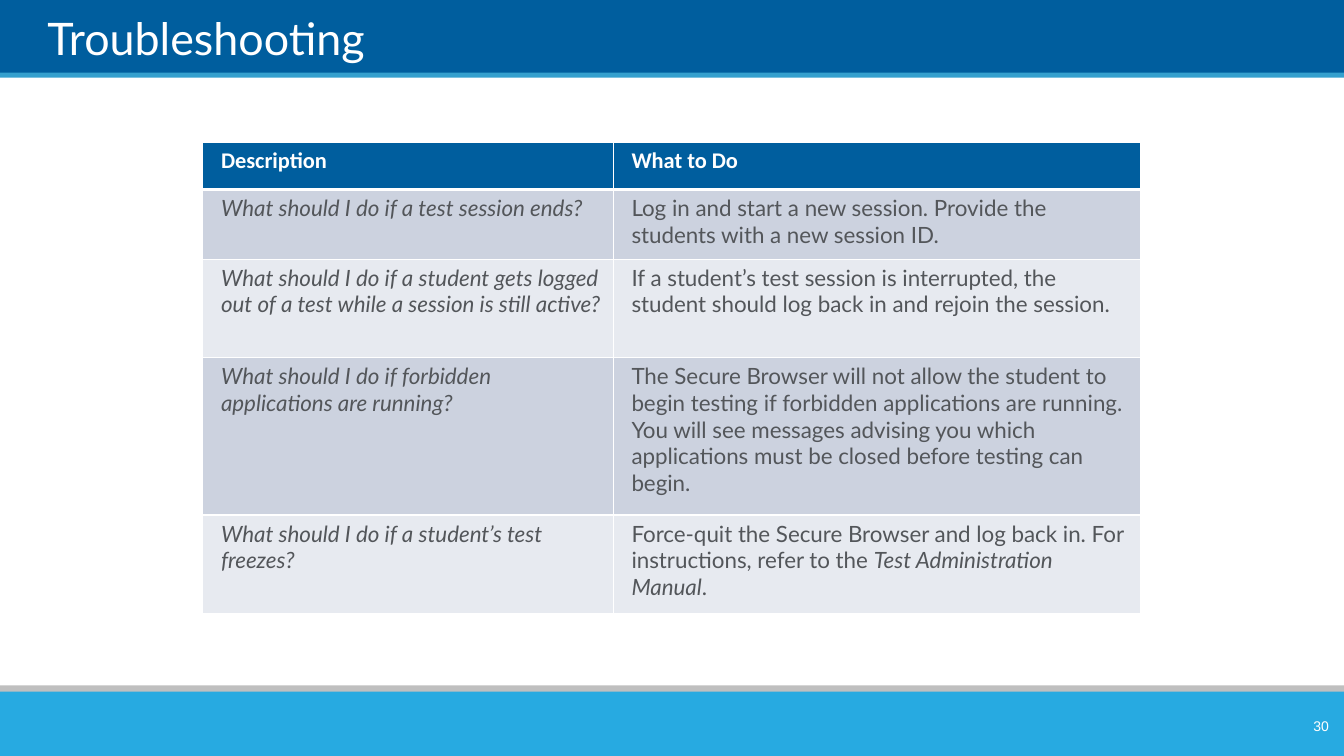
import pptx
import pptx.util
import pptx.dml.color
import pptx.enum.shapes
import pptx.enum.text
import pptx.oxml
from pptx.oxml.ns import nsdecls

Pt = pptx.util.Pt
ALIGN = pptx.enum.text.PP_ALIGN
ANCHOR = pptx.enum.text.MSO_ANCHOR

# Content: *...* marks italic text
TITLE = "Troubleshooting"
PAGE = "30"
HEADER = ("Description", "What to Do")
ROWS = [
    ("*What should I do if a test session ends?*",
     "Log in and start a new session. Provide the students with a new session ID."),
    ("*What should I do if a student gets logged out of a test while a session is still active?*",
     "If a student’s test session is interrupted, the student should log back in "
     "and rejoin the session."),
    ("*What should I do if forbidden applications are running?*",
     "The Secure Browser will not allow the student to begin testing if forbidden "
     "applications are running. You will see messages advising you which applications "
     "must be closed before testing can begin."),
    ("*What should I do if a student’s test freezes?*",
     "Force-quit the Secure Browser and log back in. For instructions, refer to the "
     "*Test Administration Manual*."),
]

# Layout and colours
W, H = 960, 540
NAVY, WHITE, GREY = "005E9E", "FFFFFF", "53565A"
BANDS = ("CCD2DF", "E7EAF0")
BARS = [  # top, height, colour
    (0, 53.3, NAVY),
    (51.8, 3.6, "35A0CE"),
    (489.6, 10, "BFBFBF"),
    (494, 46, "27AAE1"),
]
TABLE_LEFT, TABLE_TOP = 144.9, 101.6
COL_WIDTHS = (293.2, 377)
ROW_HEIGHTS = (33.8, 49.7, 70.4, 112.4, 70.4)


def rgb(value):
    return pptx.dml.color.RGBColor.from_string(value)


def add_text(tf, text, size=16, font="Lato", color=GREY, bold=False,
             align=ALIGN.LEFT, after=0):
    p = tf.paragraphs[0]
    p.alignment = align
    p.space_after = Pt(after)
    for i, part in enumerate(text.split("*")):
        if part:
            r = p.add_run()
            r.text = part
            r.font.size, r.font.name = Pt(size), font
            r.font.bold, r.font.italic = bold, i % 2 == 1
            r.font.color.rgb = rgb(color)


def add_box(s, left, top, width, height, text, anchor, **fmt):
    tf = s.shapes.add_textbox(Pt(left), Pt(top), Pt(width), Pt(height)).text_frame
    tf.word_wrap = True
    tf.vertical_anchor = anchor
    tf.margin_left = tf.margin_right = tf.margin_top = tf.margin_bottom = 0
    add_text(tf, text, **fmt)


def set_borders(cell, **widths):
    tcPr = cell._tc.get_or_add_tcPr()
    for i, side in enumerate("LRTB"):
        tcPr.insert(i, pptx.oxml.parse_xml(
            f'<a:ln{side} {nsdecls("a")} w="{Pt(widths.get(side, 1))}"><a:solidFill>'
            f'<a:srgbClr val="{WHITE}"/></a:solidFill></a:ln{side}>'))


prs = pptx.Presentation()
prs.slide_width, prs.slide_height = Pt(W), Pt(H)
s = prs.slides.add_slide(prs.slide_layouts[6])

# Header and footer bars
for top, height, color in BARS:
    bar = s.shapes.add_shape(pptx.enum.shapes.MSO_SHAPE.RECTANGLE,
                             0, Pt(top), Pt(W), Pt(height))
    bar.shadow.inherit = False
    bar.fill.solid()
    bar.fill.fore_color.rgb = rgb(color)
    bar.line.fill.background()

# Question and answer table
table = s.shapes.add_table(len(ROWS) + 1, len(HEADER), Pt(TABLE_LEFT), Pt(TABLE_TOP),
                           Pt(sum(COL_WIDTHS)), Pt(sum(ROW_HEIGHTS))).table
for col, width in zip(table.columns, COL_WIDTHS):
    col.width = Pt(width)
for row, height in zip(table.rows, ROW_HEIGHTS):
    row.height = Pt(height)
for i, texts in enumerate([HEADER] + ROWS):
    head = i == 0
    for j, text in enumerate(texts):
        cell = table.cell(i, j)
        cell.margin_left, cell.margin_right = Pt(13), Pt(7.2)
        cell.margin_top = cell.margin_bottom = Pt(3.6)
        cell.fill.solid()
        cell.fill.fore_color.rgb = rgb(NAVY if head else BANDS[(i - 1) % 2])
        set_borders(cell, B=3 if head else 1, T=3 if i == 1 else 1)
        fmt = dict(font="Calibri", color=WHITE, bold=True) if head else {}
        add_text(cell.text_frame, text, after=4, **fmt)

# Title and page number
add_box(s, 33.8, 5, 867.6, 41, TITLE, ANCHOR.BOTTOM, size=32, color=WHITE)
add_box(s, 900, 507.6, 49.2, 21.6, PAGE, ANCHOR.MIDDLE,
        size=10, font="Arial", color=WHITE, align=ALIGN.RIGHT)

prs.save("out.pptx")
